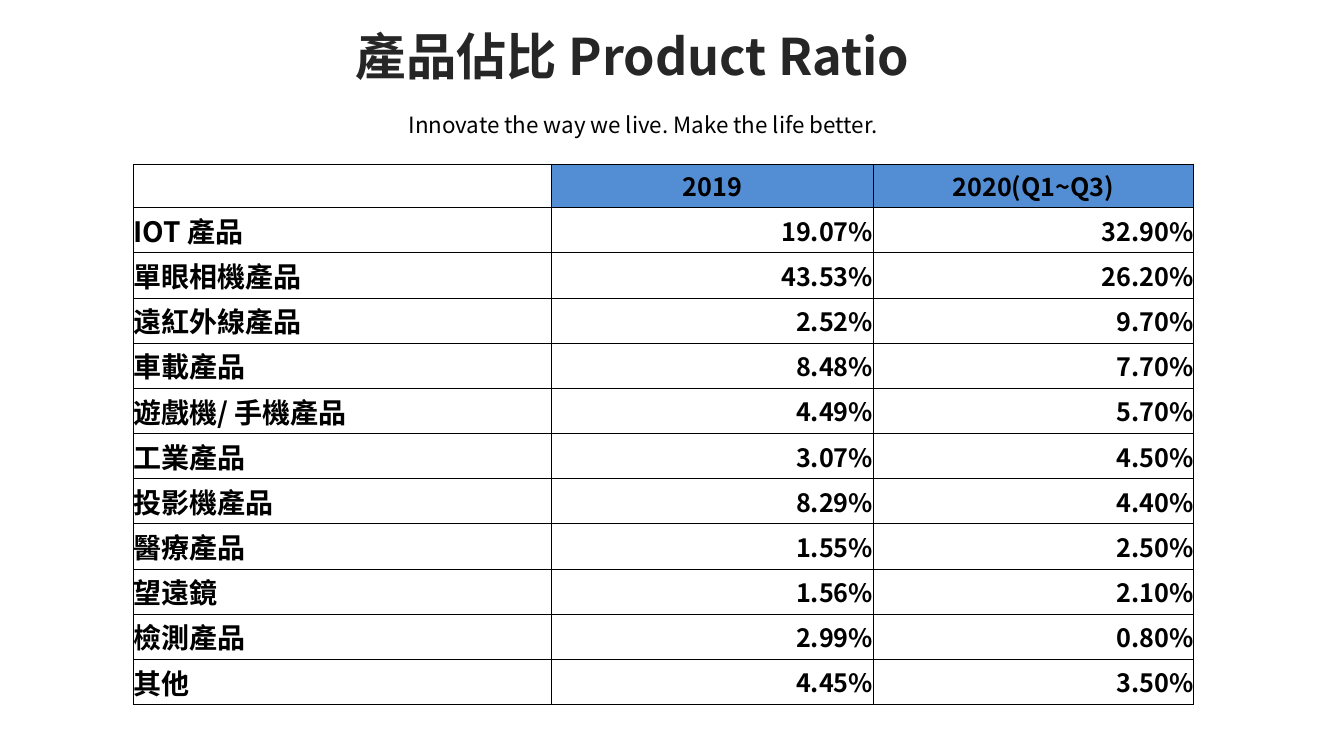
"""Build the product ratio slide: title, tagline and a bordered share table."""
from dataclasses import dataclass

from lxml.etree import SubElement
from pptx import Presentation
from pptx.dml.color import RGBColor
from pptx.enum.text import MSO_ANCHOR as Anchor, PP_ALIGN as Align
from pptx.oxml.ns import qn
from pptx.util import Inches, Pt


@dataclass(frozen=True)
class Theme:
    """Font, colours and type sizes of the slide."""
    font: str = "Noto Sans CJK SC"
    title: str = "262626"
    ink: str = "000000"
    header: str = "538ED5"
    paper: str = "FFFFFF"
    title_size: int = 36
    label_size: int = 20
    value_size: int = 18
    tagline_size: int = 16
    border: float = 0.5


THEME = Theme()
COLUMN_WIDTHS = (4.15, 3.19, 3.18)
TABLE_HEIGHT = 5.36
HEADER_HEIGHT = 0.43
HEADERS = ("", "2019", "2020(Q1~Q3)")
RATIOS = (
    ("IOT 產品", "19.07%", "32.90%"),
    ("單眼相機產品", "43.53%", "26.20%"),
    ("遠紅外線產品", "2.52%", "9.70%"),
    ("車載產品", "8.48%", "7.70%"),
    ("遊戲機/ 手機產品", "4.49%", "5.70%"),
    ("工業產品", "3.07%", "4.50%"),
    ("投影機產品", "8.29%", "4.40%"),
    ("醫療產品", "1.55%", "2.50%"),
    ("望遠鏡", "1.56%", "2.10%"),
    ("檢測產品", "2.99%", "0.80%"),
    ("其他", "4.45%", "3.50%"),
)


def add_run(paragraph, text, size, color, bold=True):
    """Add one styled run, with the same font for Latin and Chinese text."""
    run = paragraph.add_run()
    run.text = text
    run.font.name = THEME.font
    run.font.size = Pt(size)
    run.font.bold = bold
    run.font.color.rgb = RGBColor.from_string(color)
    SubElement(run.font._element, qn("a:ea"), typeface=THEME.font)


def add_text(slide, bounds, align, anchor, line_spacing):
    """Add a one-paragraph text box and return the paragraph."""
    frame = slide.shapes.add_textbox(*map(Inches, bounds)).text_frame
    frame.word_wrap = True
    frame.vertical_anchor = anchor
    paragraph = frame.paragraphs[0]
    paragraph.alignment = align
    paragraph.line_spacing = line_spacing
    paragraph.space_before = Pt(10)
    return paragraph


def add_borders(cell):
    """Draw a thin line on all four sides of a cell."""
    properties = cell._tc.get_or_add_tcPr()
    for index, side in enumerate(("lnL", "lnR", "lnT", "lnB")):
        line = SubElement(properties, qn(f"a:{side}"), w=str(Pt(THEME.border)))
        fill = SubElement(line, qn("a:solidFill"))
        SubElement(fill, qn("a:srgbClr"), val=THEME.ink)
        properties.insert(index, line)


def fill_cell(cell, text, size, align, fill):
    """Write one table cell with its fill, borders and text."""
    cell.margin_left = cell.margin_right = cell.margin_top = cell.margin_bottom = 0
    cell.vertical_anchor = Anchor.MIDDLE
    if fill:
        cell.fill.solid()
        cell.fill.fore_color.rgb = RGBColor.from_string(fill)
    else:
        cell.fill.background()
    add_borders(cell)
    if text:
        paragraph = cell.text_frame.paragraphs[0]
        paragraph.alignment = align
        add_run(paragraph, text, size, THEME.ink)


def add_ratio_table(slide):
    """Add the table of product shares by year."""
    bounds = (1.32, 1.63, sum(COLUMN_WIDTHS), TABLE_HEIGHT)
    table = slide.shapes.add_table(
        len(RATIOS) + 1, len(HEADERS), *map(Inches, bounds)).table
    table.first_row = table.horz_banding = False
    for column, width in zip(table.columns, COLUMN_WIDTHS):
        column.width = Inches(width)
    row_height = (TABLE_HEIGHT - HEADER_HEIGHT) / len(RATIOS)
    for index, row in enumerate(table.rows):
        row.height = Inches(row_height if index else HEADER_HEIGHT)
    for column, text in enumerate(HEADERS):
        fill_cell(table.cell(0, column), text, THEME.value_size,
                  Align.CENTER, THEME.header if text else None)
    for row, (label, *values) in enumerate(RATIOS, 1):
        fill_cell(table.cell(row, 0), label, THEME.label_size, Align.LEFT, None)
        for column, value in enumerate(values, 1):
            fill_cell(table.cell(row, column), value, THEME.value_size,
                      Align.RIGHT, THEME.paper)


def main():
    """Build and save the slide."""
    presentation = Presentation()
    presentation.slide_width = Inches(13.33)
    presentation.slide_height = Inches(7.5)
    slide = presentation.slides.add_slide(presentation.slide_layouts[6])
    tagline = add_text(slide, (2.13, 1.08, 8.5, 0.4), Align.CENTER, Anchor.TOP, 0.9)
    add_run(tagline, "Innovate the way we live. Make the life better.",
            THEME.tagline_size, THEME.ink, bold=False)
    title = add_text(slide, (3.43, 0.35, 6.13, 0.73), Align.LEFT, Anchor.MIDDLE, Pt(20))
    add_run(title, "產品佔比 Product Ratio", THEME.title_size, THEME.title)
    add_ratio_table(slide)
    presentation.save("out.pptx")


if __name__ == "__main__":
    main()
